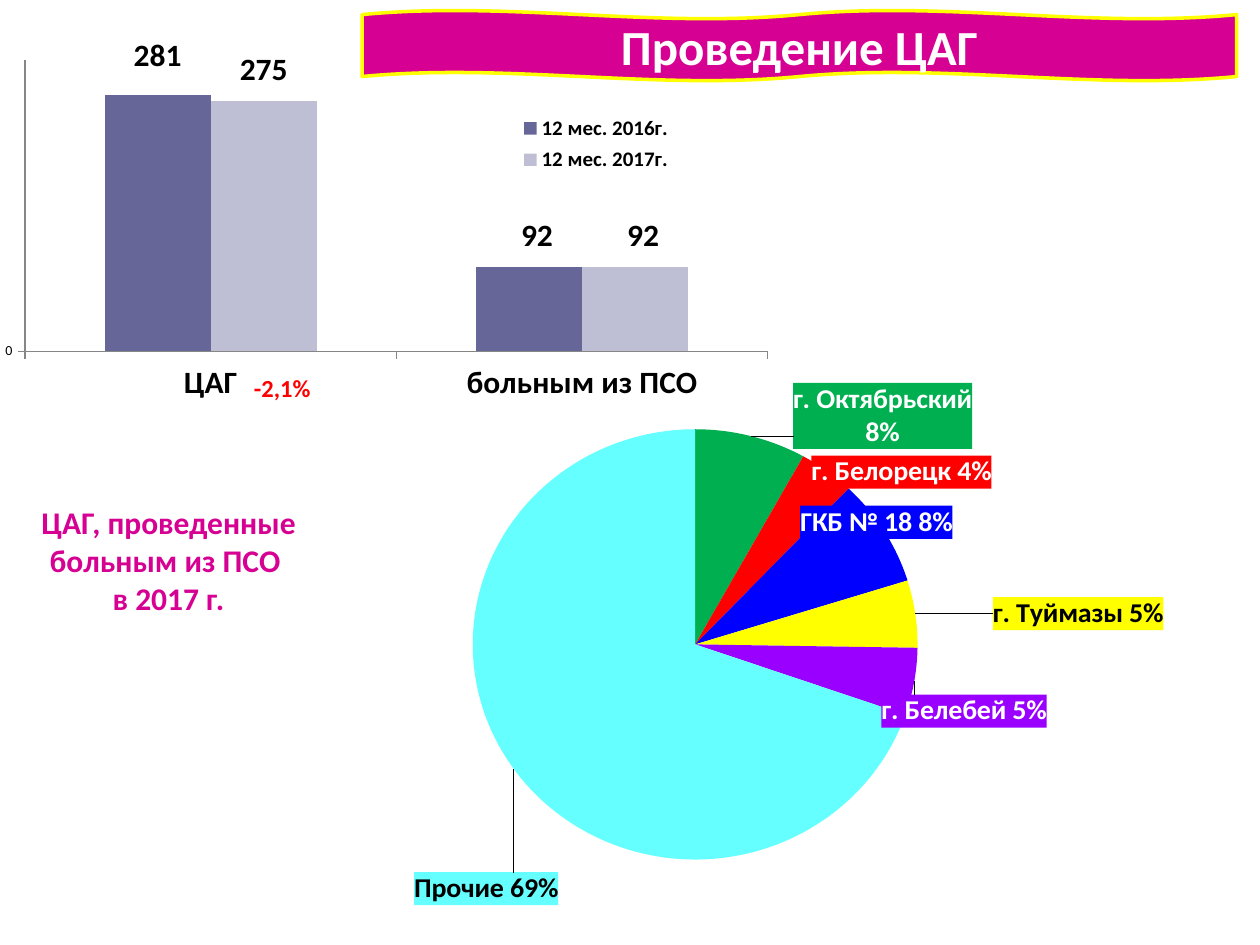
"""Builds a slide on coronary angiography counts with a column chart and a pie chart."""
from lxml.etree import SubElement
from pptx import Presentation
from pptx.chart.data import CategoryChartData
from pptx.dml.color import RGBColor
from pptx.enum.chart import XL_CHART_TYPE, XL_LABEL_POSITION, XL_LEGEND_POSITION, XL_TICK_MARK
from pptx.enum.shapes import MSO_SHAPE
from pptx.enum.text import MSO_ANCHOR, PP_ALIGN
from pptx.oxml import parse_xml
from pptx.oxml.ns import nsdecls, qn
from pptx.util import Cm, Pt

BLACK = RGBColor(0, 0, 0)
WHITE = RGBColor(255, 255, 255)
PINK = RGBColor(0xD6, 0x00, 0x93)
RED = RGBColor(255, 0, 0)
YELLOW = RGBColor(255, 255, 0)
GREEN = RGBColor(0x00, 0xB0, 0x50)
BLUE = RGBColor(0, 0, 255)
PURPLE = RGBColor(0x99, 0x00, 0xFF)
CYAN = RGBColor(0x66, 0xFF, 0xFF)
SLATE = RGBColor(0x66, 0x66, 0x99)
LILAC = RGBColor(0xBE, 0xBE, 0xD4)
GREY = RGBColor(0x86, 0x86, 0x86)


def style(item, form):
    for name, value in form.items():
        if name == "color":
            item.color.rgb = value
        else:
            setattr(item, name, value)


def place(node, after, spot, inner=False):
    layout = parse_xml(f"<c:layout {nsdecls('c')}><c:manualLayout/></c:layout>")
    vals = {"layoutTarget": "inner"} if inner else {}
    if len(spot) == 4:
        vals |= {"xMode": "edge", "yMode": "edge"}
    vals |= dict(zip("xywh", spot))
    for name, value in vals.items():
        SubElement(layout[0], qn(f"c:{name}")).set("val", str(value))
    for old in node.findall(qn("c:layout")):
        node.remove(old)
    if after is None:
        node.insert(0, layout)
    else:
        after.addnext(layout)
    return layout


deck = Presentation()
style(deck, {"slide_width": Cm(25.4), "slide_height": Cm(19.05)})
slide = deck.slides.add_slide(deck.slide_layouts[6])
BASE = {"name": "Calibri", "size": Pt(18), "color": BLACK}

towns = [
    ("г. Октябрьский", 8, GREEN, WHITE, (0.04, 0.02)),
    ("г. Белорецк", 4, RED, WHITE, (-0.02, 0.04)),
    ("ГКБ № 18", 8, BLUE, WHITE, (-0.09, 0.02)),
    ("г. Туймазы", 5, YELLOW, BLACK, (0.07, 0.03)),
    ("г. Белебей", 5, PURPLE, WHITE, (-0.04, 0.02)),
    ("Прочие", 69, CYAN, BLACK, (0.05, 0.17)),
]
data = CategoryChartData()
data.categories = [town[0] for town in towns]
data.add_series("Series 1", [town[1] for town in towns])
pie = slide.shapes.add_chart(
    XL_CHART_TYPE.PIE, Cm(5.21), Cm(7.32), Cm(20.24), Cm(12.12), data).chart
style(pie, {"has_legend": False, "has_title": False})
style(pie.font, BASE)
area = pie.plots[0]
area.vary_by_categories = True
place(area._element.getparent(), None, (0, 0.08, 0.87, 0.74), True)
share = area.series[0]
style(share.data_labels, {"show_category_name": True, "show_value": True})
style(share.data_labels.font, BASE | {"size": Pt(16), "bold": True})
for i, (town, count, fill, ink, spot) in enumerate(towns):
    point = share.points[i]
    point.format.fill.solid()
    point.format.fill.fore_color.rgb = fill
    label = point.data_label
    label.position = XL_LABEL_POSITION.OUTSIDE_END
    style(label.font, BASE | {"size": Pt(16), "bold": True, "color": ink})
    node = share._element.xpath(f'c:dLbls/c:dLbl[c:idx/@val="{i}"]')[0]
    for old in node.findall(qn("c:spPr")):
        node.remove(old)
    layout = place(node, node.find(qn("c:idx")), spot)
    layout.addnext(parse_xml(
        f"<c:spPr {nsdecls('c', 'a')}><a:solidFill><a:srgbClr val=\"{fill}\"/>"
        "</a:solidFill></c:spPr>"))
    layout.addnext(parse_xml(
        f"<c:numFmt {nsdecls('c')} formatCode='0\"%\"' sourceLinked=\"0\"/>"))
    node.find(qn("c:showCatName")).set("val", "1")
    SubElement(node, qn("c:separator")).text = " "

years = [
    ("12 мес. 2016г.", (281, 92), SLATE, [(0, -0.04), (0.01, -0.02)]),
    ("12 мес. 2017г.", (275, 92), LILAC, [(0, -0.02), (0.01, -0.02)]),
]
data = CategoryChartData()
data.categories = ["ЦАГ", "больным из ПСО"]
for year, counts, fill, spots in years:
    data.add_series(year, counts)
bars = slide.shapes.add_chart(
    XL_CHART_TYPE.COLUMN_CLUSTERED, Cm(-0.3), Cm(0.74), Cm(16.1), Cm(8.41), data).chart
style(bars, {"has_legend": True, "has_title": False})
style(bars.font, BASE)
area = bars.plots[0]
style(area, {"gap_width": 150, "overlap": 0, "vary_by_categories": False})
place(area._element.getparent(), None, (0.05, 0.04, 0.93, 0.71), True)
style(bars.legend, {"position": XL_LEGEND_POSITION.RIGHT, "include_in_layout": False})
style(bars.legend.font, BASE | {"size": Pt(12), "bold": True})
place(bars.legend._element, bars.legend._element.find(qn("c:legendPos")),
      (0.66, 0.16, 0.21, 0.17))
style(bars.value_axis, {"minimum_scale": 0, "maximum_scale": 320, "major_unit": 600,
                        "has_major_gridlines": True})
style(bars.value_axis.major_gridlines.format.line, {"color": GREY, "width": Pt(0.75)})
for axis, form in ((bars.category_axis, {"bold": True}), (bars.value_axis, {"size": Pt(8)})):
    axis.major_tick_mark = XL_TICK_MARK.OUTSIDE
    style(axis.format.line, {"color": GREY, "width": Pt(0.75)})
    style(axis.tick_labels.font, BASE | form)
for run, (year, counts, fill, spots) in zip(area.series, years):
    run.format.fill.solid()
    run.format.fill.fore_color.rgb = fill
    run.data_labels.show_value = True
    style(run.data_labels.font, BASE | {"bold": True})
    for lead in run._element.xpath("c:dLbls/c:showLeaderLines"):
        lead.set("val", "0")
    for i, spot in enumerate(spots):
        label = run.points[i].data_label
        label.position = XL_LABEL_POSITION.OUTSIDE_END
        style(label.font, BASE | {"bold": True})
        node = run._element.xpath(f'c:dLbls/c:dLbl[c:idx/@val="{i}"]')[0]
        place(node, node.find(qn("c:idx")), spot)

notes = [
    (MSO_SHAPE.RECTANGLE, (0.3, 10.13, 6.2, 2.31), WHITE, None, 18, PINK,
     ["ЦАГ, проведенные больным из ПСО ", "в 2017 г."]),
    (MSO_SHAPE.OVAL, (4.09, 7.11, 3.2, 1.4), None, None, 14, RED, ["-2,1%"]),
    (MSO_SHAPE.DOUBLE_WAVE, (7.3, 0.21, 17.63, 1.42), PINK, YELLOW, 28, WHITE,
     ["Проведение ЦАГ"]),
]
for kind, box, fill, edge, size, ink, lines in notes:
    shape = slide.shapes.add_shape(kind, *map(Cm, box))
    shape.shadow.inherit = False
    if fill is None:
        shape.fill.background()
    else:
        shape.fill.solid()
        shape.fill.fore_color.rgb = fill
    if edge is None:
        shape.line.fill.background()
    else:
        style(shape.line, {"color": edge, "width": Pt(2)})
    frame = shape.text_frame
    style(frame, {"text": "\n".join(lines), "word_wrap": True,
                  "vertical_anchor": MSO_ANCHOR.MIDDLE})
    for para in frame.paragraphs:
        para.alignment = PP_ALIGN.CENTER
        style(para.runs[0].font, {"name": "Calibri", "size": Pt(size), "bold": True,
                                  "color": ink})
    if kind == MSO_SHAPE.DOUBLE_WAVE:
        shape.adjustments[0] = 0.06
        shape.adjustments[1] = 0

deck.save("out.pptx")
